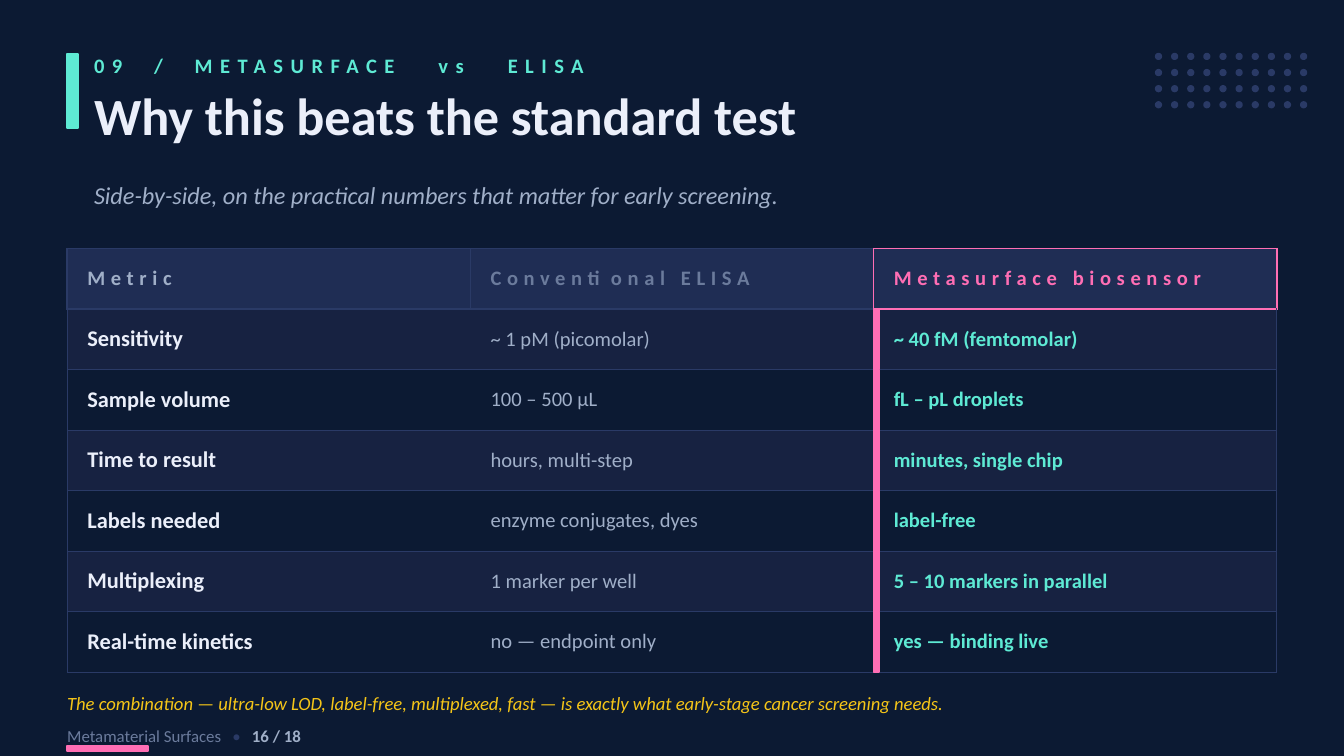
from lxml.etree import SubElement
from pptx import Presentation
from pptx.dml.color import RGBColor
from pptx.enum.shapes import MSO_SHAPE
from pptx.enum.text import MSO_ANCHOR
from pptx.oxml import parse_xml
from pptx.oxml.ns import nsdecls, qn
from pptx.util import Pt

PX = 914400 // 200

NAVY, BAND, HEADER, SLATE = "0C1A33", "172241", "1F2D54", "2A3A66"
MINT, PINK, GOLD = "5EEAD4", "FF6EB4", "F5C518"
WHITE, SILVER, GREY = "EBEFFA", "A0AFC8", "6B7B9C"

HEADINGS = ["Metric", "Conventional ELISA", "Metasurface biosensor"]
HEADING_COLORS = [SILVER, GREY, PINK]
ROWS = [
    ["Sensitivity", "~ 1 pM (picomolar)", "~ 40 fM (femtomolar)"],
    ["Sample volume", "100 – 500 µL", "fL – pL droplets"],
    ["Time to result", "hours, multi-step", "minutes, single chip"],
    ["Labels needed", "enzyme conjugates, dyes", "label-free"],
    ["Multiplexing", "1 marker per well", "5 – 10 markers in parallel"],
    ["Real-time kinetics", "no — endpoint only", "yes — binding live"],
]
BODY_FORMATS = [
    dict(size=12, color=WHITE, bold=True),
    dict(size=11, color=SILVER),
    dict(size=11, color=MINT, bold=True),
]
LEFT, TOP, COL_W, ROW_H = 100, 370, 600, 90


def px(n):
    return n * PX


def rgb(value):
    return RGBColor.from_string(value)


def add_text(p, text, size=11, color=WHITE, bold=False, italic=False,
             spacing=0, font="Calibri"):
    r = p.add_run()
    r.text = text
    r.font.name = font
    r.font.size = Pt(size)
    r.font.bold = bold
    r.font.italic = italic
    r.font.color.rgb = rgb(color)
    if spacing:
        r._r.get_or_add_rPr().set("spc", str(round(spacing * 100)))


class Deck:
    def __init__(self, width, height, background):
        self.prs = Presentation()
        self.prs.slide_width, self.prs.slide_height = px(width), px(height)
        self.s = self.prs.slides.add_slide(self.prs.slide_layouts[6])
        self.s.background.fill.solid()
        self.s.background.fill.fore_color.rgb = rgb(background)

    def shape(self, x, y, w, h, color, kind=MSO_SHAPE.RECTANGLE):
        sp = self.s.shapes.add_shape(kind, px(x), px(y), px(w), px(h))
        sp.shadow.inherit = False
        sp.fill.solid()
        sp.fill.fore_color.rgb = rgb(color)
        sp.line.color.rgb = rgb(color)
        sp.line.width = Pt(1)

    def text(self, x, y, w, h, *runs, **style):
        tf = self.s.shapes.add_textbox(px(x), px(y), px(w), px(h)).text_frame
        tf.word_wrap = True
        tf.vertical_anchor = MSO_ANCHOR.MIDDLE
        tf.margin_left = tf.margin_right = tf.margin_top = tf.margin_bottom = 0
        for text, extra in runs:
            add_text(tf.paragraphs[0], text, **{**style, **extra})

    def table(self, x, y, col_w, row_h, rows, cols):
        frame = self.s.shapes.add_table(rows, cols, px(x), px(y),
                                        px(col_w * cols), px(row_h * rows))
        table = frame.table
        table.first_row = table.horz_banding = False
        for row in table.rows:
            row.height = px(row_h)
        for col in table.columns:
            col.width = px(col_w)
        return table

    def cell(self, cell, text, fill, borders, **style):
        cell.vertical_anchor = MSO_ANCHOR.MIDDLE
        cell.margin_left = cell.margin_right = px(30)
        cell.margin_top = cell.margin_bottom = 0
        cell.fill.solid()
        cell.fill.fore_color.rgb = rgb(fill)
        add_text(cell.text_frame.paragraphs[0], text, **style)
        tc_pr = cell._tc.get_or_add_tcPr()
        for i, (side, border) in enumerate(zip("LRTB", borders)):
            ln = parse_xml(f'<a:ln{side} {nsdecls("a")}/>')
            if border:
                color, width = border
                ln.set("w", str(Pt(width)))
                solid = SubElement(ln, qn("a:solidFill"))
                SubElement(solid, qn("a:srgbClr")).set("val", color)
            else:
                SubElement(ln, qn("a:noFill"))
            tc_pr.insert(i, ln)


def comparison_table(deck):
    table = deck.table(LEFT, TOP, COL_W, ROW_H, len(ROWS) + 1, len(HEADINGS))
    thin, edge, accent = (SLATE, 0.5), (SLATE, 1), (PINK, 1)
    frames = [edge, edge, accent]
    for c, heading in enumerate(HEADINGS):
        right = frames[min(c + 1, 2)]
        deck.cell(table.cell(0, c), heading, HEADER,
                  [frames[c], right, frames[c], frames[c]],
                  color=HEADING_COLORS[c], bold=True, spacing=3)
    for r, row in enumerate(ROWS):
        for c, text in enumerate(row):
            borders = [thin if c == 0 else None, thin if c == 2 else None,
                       frames[c] if r == 0 else thin, thin]
            deck.cell(table.cell(r + 1, c), text, NAVY if r % 2 else BAND,
                      borders, **BODY_FORMATS[c])
    for r in range(len(ROWS)):
        deck.shape(LEFT + 2 * COL_W, TOP + (r + 1) * ROW_H, 8, ROW_H, PINK)


def main():
    deck = Deck(2000, 1125, NAVY)

    deck.shape(100, 80, 16, 110, MINT)
    narrow, wide = (" ", dict(spacing=10.5)), (" ", dict(spacing=17))
    deck.text(140, 72, 1700, 50, ("09", {}), narrow, ("/", {}), narrow,
              ("METASURFACE", {}), wide, ("vs", {}), wide, ("ELISA", {}),
              size=11, color=MINT, bold=True, spacing=4)
    deck.text(140, 110, 1760, 120, ("Why this beats the standard test", {}),
              size=28, bold=True)
    for row in range(4):
        for col in range(10):
            deck.shape(1720 + 24 * col, 80 + 24 * row, 8, 8, SLATE,
                       MSO_SHAPE.OVAL)
    deck.text(140, 250, 1760, 80,
              ("Side-by-side, on the practical numbers that matter "
               "for early screening.", {}),
              size=13, color=SILVER, italic=True)

    comparison_table(deck)

    deck.text(LEFT, 1026, 1800, 40,
              ("The combination — ultra-low LOD, label-free, multiplexed, fast "
               "— is exactly what early-stage cancer screening needs.", {}),
              size=10, color=GOLD, italic=True)
    gap = (" ", dict(spacing=4))
    deck.text(LEFT, 1070, 1800, 50, ("Metamaterial Surfaces", {}), gap,
              ("•", dict(color=SLATE)), gap,
              ("16 / 18", dict(color=SILVER, bold=True)), size=9, color=GREY)
    deck.shape(LEFT, 1110, 120, 8, PINK)

    deck.prs.save("out.pptx")


if __name__ == "__main__":
    main()
